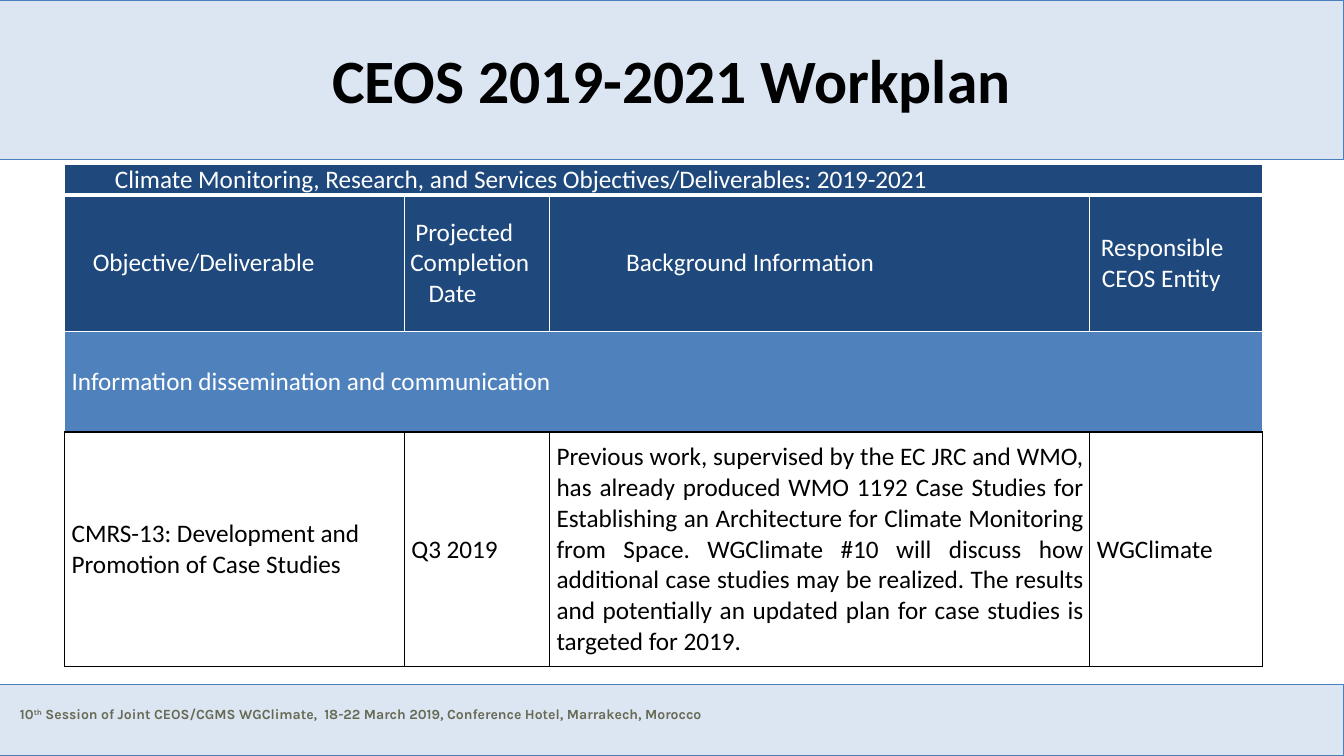
from lxml import etree
from pptx import Presentation
from pptx.dml.color import RGBColor
from pptx.enum.shapes import MSO_SHAPE
from pptx.enum.text import MSO_ANCHOR, PP_ALIGN
from pptx.oxml.ns import qn
from pptx.util import Inches, Pt

WHITE = RGBColor(0xFF, 0xFF, 0xFF)
BLACK = RGBColor(0, 0, 0)
NAVY = RGBColor(0x1F, 0x49, 0x7D)
BLUE = RGBColor(0x4F, 0x81, 0xBD)
PALE_BLUE = RGBColor(0xDC, 0xE6, 0xF2)
BAND_LINE = RGBColor(0x4B, 0x7E, 0xBC)
OLIVE = RGBColor(0x67, 0x6A, 0x55)

COLUMN_WIDTHS = [3.37, 1.44, 5.36, 1.71]
ROW_HEIGHTS = [0.3, 1.35, 1, 2.33]
PAD = 0.07

# Each cell is a list of (line, left indent in inches).
TABLE_HEADING = [("Climate Monitoring, Research, and Services "
                  "Objectives/Deliverables: 2019-2021", 0.5)]
COLUMN_HEADINGS = [
    [("Objective/Deliverable", 0.28)],
    [("Projected", 0.11), ("Completion", 0.06), ("Date", 0.24)],
    [("Background Information", 0.76)],
    [("Responsible", 0.11), ("CEOS Entity", 0.12)],
]
SECTION = [("Information dissemination and communication", PAD)]
DELIVERABLE = [
    [("CMRS-13: Development and", PAD), ("Promotion of Case Studies", PAD)],
    [("Q3 2019", PAD)],
    [("Previous work, supervised by the EC JRC and WMO, has already produced "
      "WMO 1192 Case Studies for Establishing an Architecture for Climate "
      "Monitoring from Space. WGClimate #10 will discuss how additional case "
      "studies may be realized. The results and potentially an updated plan "
      "for case studies is targeted for 2019.", PAD)],
    [("WGClimate", PAD)],
]


class WorkplanSlide:
    def __init__(self, presentation):
        self.slide = presentation.slides.add_slide(presentation.slide_layouts[5])
        self.shapes = self.slide.shapes

    def set_font(self, paragraph, size, color, name="Calibri", bold=False):
        font = paragraph.font
        font.name, font.size, font.bold = name, Pt(size), bold
        font.color.rgb = color

    def band(self, top, height):
        band = self.shapes.add_shape(MSO_SHAPE.RECTANGLE, 0, Inches(top),
                                     Inches(13.33), Inches(height))
        band.shadow.inherit = False
        band.fill.solid()
        band.fill.fore_color.rgb = PALE_BLUE
        band.line.color.rgb = BAND_LINE
        band.line.width = Pt(0.75)

    def title(self, text):
        title = self.shapes.title
        title.left, title.top = Inches(2.11), Inches(0.16)
        title.width, title.height = Inches(9.11), Inches(1.25)
        title.text_frame.text = text
        title.text_frame.vertical_anchor = MSO_ANCHOR.MIDDLE
        heading = title.text_frame.paragraphs[0]
        heading.alignment = PP_ALIGN.CENTER
        self.set_font(heading, 44, BLACK, bold=True)
        # Bring the title in front of the bands.
        title._element.getparent().append(title._element)

    def footer(self, number, ordinal, rest):
        footer = self.shapes.add_textbox(Inches(0.1), Inches(6.95),
                                         Inches(10.64), Inches(0.27))
        footer.text_frame.word_wrap = True
        session = footer.text_frame.paragraphs[0]
        self.set_font(session, 10, OLIVE, "Karla", True)
        for text in (number, ordinal, rest):
            run = session.add_run()
            run.text = text
            if text == ordinal:
                run._r.get_or_add_rPr().set("baseline", "30000")

    def table(self, left, top):
        frame = self.shapes.add_table(
            len(ROW_HEIGHTS), len(COLUMN_WIDTHS), Inches(left), Inches(top),
            Inches(sum(COLUMN_WIDTHS)), Inches(sum(ROW_HEIGHTS)))
        table = frame.table
        table.first_row = table.horz_banding = False
        for column, width in zip(table.columns, COLUMN_WIDTHS):
            column.width = Inches(width)
        for row, height in zip(table.rows, ROW_HEIGHTS):
            row.height = Inches(height)
        return table

    def border(self, cell, side, color, width):
        line = etree.SubElement(cell._tc.get_or_add_tcPr(), qn(f"a:ln{side}"),
                                w=str(Pt(width)))
        fill = etree.SubElement(line, qn("a:solidFill"))
        etree.SubElement(fill, qn("a:srgbClr"), val=str(color))

    def row(self, cells, contents, fill, text_color=WHITE, edge=WHITE,
            bottom_edge=None, top_width=1, bottom_width=1, anchor=MSO_ANCHOR.MIDDLE):
        """Fill one table row; a single content spans all its columns."""
        if len(contents) == 1:
            cells[0].merge(cells[-1])
        for cell in cells:
            for side in "LR":
                self.border(cell, side, edge, 1)
            self.border(cell, "T", edge, top_width)
            self.border(cell, "B", bottom_edge or edge, bottom_width)
            cell.fill.solid()
            cell.fill.fore_color.rgb = fill
        for cell, lines in zip(cells, contents):
            self.cell_text(cell, lines, text_color, anchor)

    def cell_text(self, cell, lines, color, anchor):
        cell.margin_left = cell.margin_top = cell.margin_bottom = 0
        cell.margin_right = Inches(0.06)
        cell.vertical_anchor = anchor
        cell.text = "\n".join(text for text, _ in lines)
        for paragraph, (_, indent) in zip(cell.text_frame.paragraphs, lines):
            paragraph.alignment = PP_ALIGN.JUSTIFY
            properties = paragraph._p.get_or_add_pPr()
            properties.set("marL", str(Inches(indent)))
            properties.set("indent", "0")
            self.set_font(paragraph, 18, color)


def main():
    presentation = Presentation()
    presentation.slide_width = Inches(13.33)
    presentation.slide_height = Inches(7.5)
    workplan = WorkplanSlide(presentation)

    workplan.band(6.79, 0.71)
    workplan.band(0, 1.58)
    workplan.footer("10", "th", " Session of Joint CEOS/CGMS WGClimate,  "
                    "18-22 March 2019, Conference Hotel, Marrakech, Morocco")
    workplan.title("CEOS 2019-2021 Workplan")

    table = workplan.table(0.64, 1.63)
    heading, columns, section, deliverable = (list(row.cells) for row in table.rows)
    workplan.row(heading, [TABLE_HEADING], NAVY, bottom_width=3,
                 anchor=MSO_ANCHOR.TOP)
    workplan.row(columns, COLUMN_HEADINGS, NAVY, top_width=3)
    workplan.row(section, [SECTION], BLUE, bottom_edge=BLACK)
    workplan.row(deliverable, DELIVERABLE, WHITE, text_color=BLACK, edge=BLACK)

    presentation.save("out.pptx")


if __name__ == "__main__":
    main()
